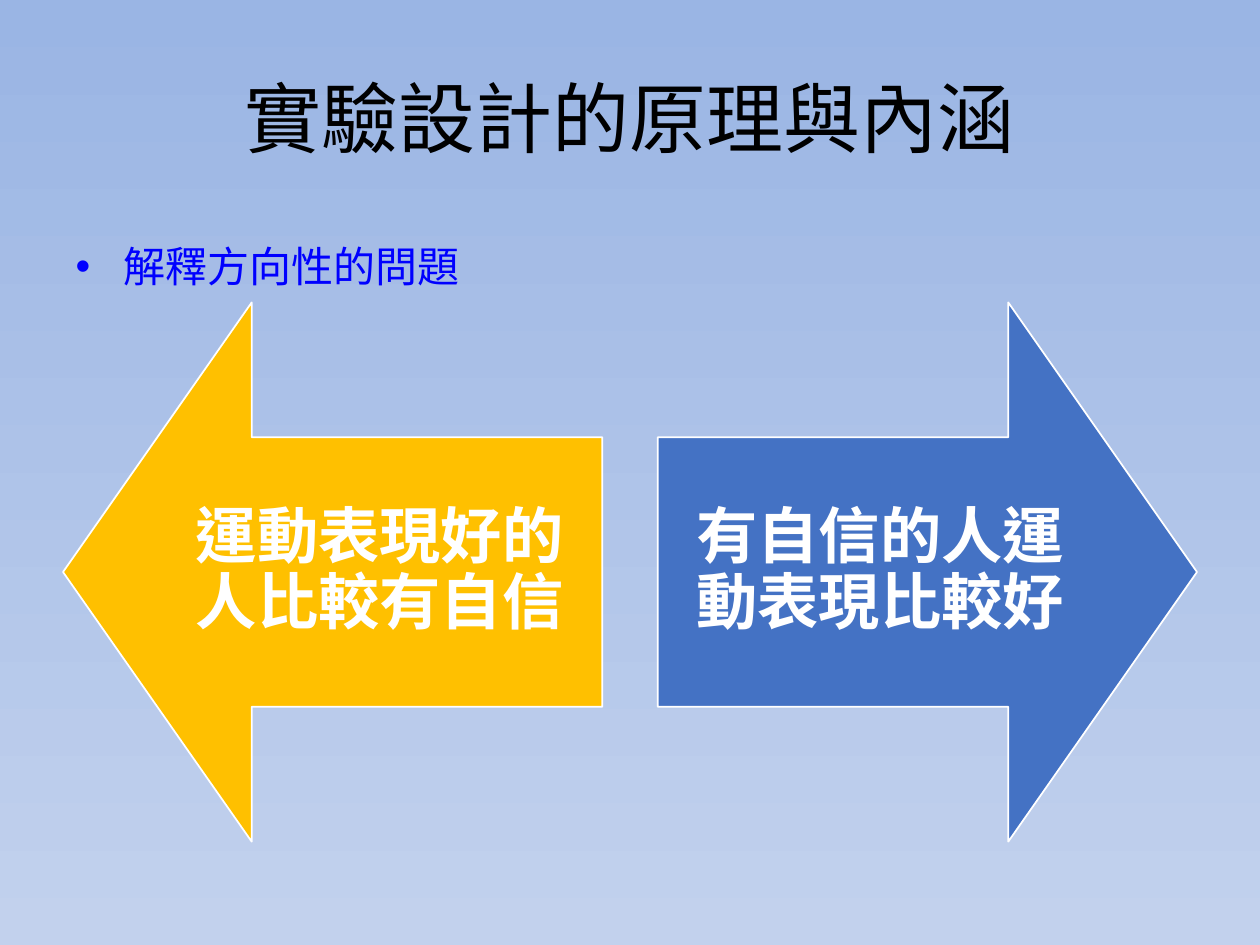
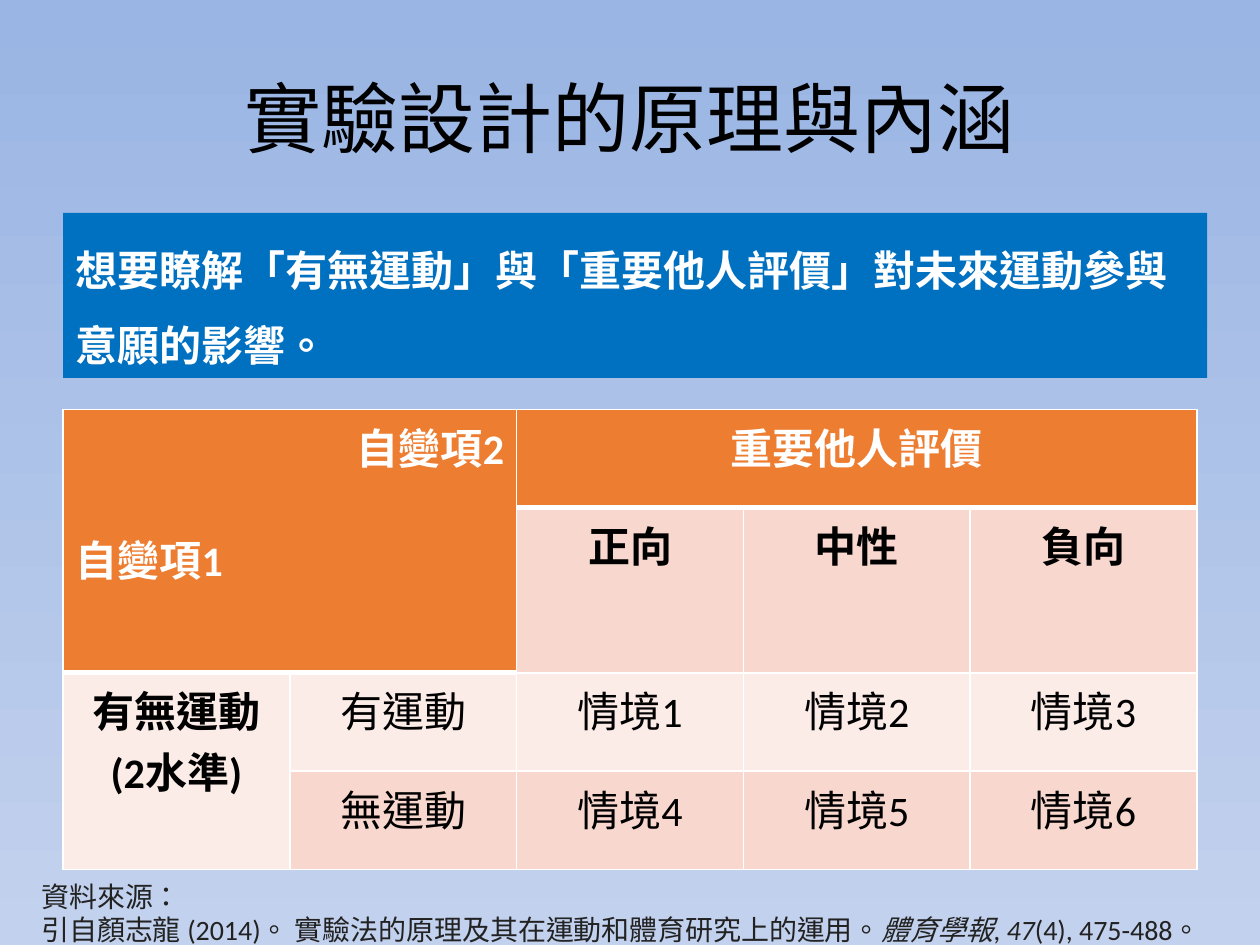
from dataclasses import dataclass

from lxml import etree
from pptx import Presentation
from pptx.dml.color import RGBColor
from pptx.enum.lang import MSO_LANGUAGE_ID
from pptx.enum.shapes import MSO_SHAPE
from pptx.enum.text import MSO_ANCHOR, MSO_AUTO_SIZE, PP_ALIGN
from pptx.oxml.ns import qn
from pptx.util import Inches, Pt

LEFT, CENTER, RIGHT = PP_ALIGN.LEFT, PP_ALIGN.CENTER, PP_ALIGN.RIGHT
TOP, MIDDLE = MSO_ANCHOR.TOP, MSO_ANCHOR.MIDDLE
LEFT_ARROW, RIGHT_ARROW = MSO_SHAPE.LEFT_ARROW, MSO_SHAPE.RIGHT_ARROW
RECTANGLE = MSO_SHAPE.RECTANGLE
NO_AUTOFIT = MSO_AUTO_SIZE.NONE
TAIWAN = MSO_LANGUAGE_ID.TRADITIONAL_CHINESE


@dataclass(frozen=True)
class Theme:
    """Colours, typefaces and type sizes shared by the slides."""
    latin: str = "Calibri"
    asian: str = "Noto Sans CJK SC"
    sky: tuple = ("9AB5E4", "C2D1ED")
    ink: str = "000000"
    paper: str = "FFFFFF"
    bullet: str = "0000FF"
    gold: str = "FFC000"
    blue: str = "4472C4"
    question: str = "0070C0"
    source: str = "222222"
    header: str = "ED7D31"
    dark_band: str = "F8D7CE"
    light_band: str = "FCECE8"
    title_size: int = 44
    arrow_size: int = 35
    body_size: int = 24
    source_size: int = 16


THEME = Theme()
WIDTH, HEIGHT, MARGIN = 10, 7.5, 0.5
CONTENT = WIDTH - 2 * MARGIN

TITLE = "實驗設計的原理與內涵"
TOPIC = "解釋方向性的問題"
ARROWS = [
    (LEFT_ARROW, THEME.gold, "運動表現好的人比較有自信"),
    (RIGHT_ARROW, THEME.blue, "有自信的人運動表現比較好"),
]
ARROW_SIDE, ARROW_TOP = 4.28, 2.4

QUESTION = "想要瞭解「有無運動」與「重要他人評價」對未來運動參與意願的影響。"
SOURCE_LABEL = "資料來源："
CITATION = [
    ("引自顏志龍 (2014)。 實驗法的原理及其在運動和體育研究上的運用。", False),
    ("體育學報", True), (",\u00a0", False), ("47", True), ("(4), 475-488。", False),
]
FACTORS = [
    [[("自變項2", RIGHT), ("自變項1", LEFT)], None, "重要他人評價", None, None],
    [None, None, "正向", "中性", "負向"],
    [["有無運動", "(2水準)"], "有運動", "情境1", "情境2", "情境3"],
    [None, "無運動", "情境4", "情境5", "情境6"],
]
MERGES = [((0, 0), (1, 1)), ((0, 2), (0, 4)), ((2, 0), (3, 0))]
ROW_HEIGHTS = [0.78, 1.31, 0.78, 0.78]
STUB_COLUMNS = 2
LINE_GAP = 29


def rgb(colour):
    """Turn a hex string into a colour."""
    return RGBColor.from_string(colour)


def inches(*lengths):
    """Convert lengths in inches."""
    return [Inches(length) for length in lengths]


def style(item, size, colour, bold=False, italic=False):
    """Set the font of a paragraph or a run."""
    font = item.font
    font.name, font.size, font.bold, font.italic = THEME.latin, Pt(size), bold, italic
    font.color.rgb = rgb(colour)
    font.language_id = TAIWAN
    for latin in list(item._element.iter(qn("a:latin"))):
        asian = etree.Element(qn("a:ea"), typeface=THEME.asian)
        latin.addnext(asian)


def write(para, text, size, colour, bold=False, align=LEFT):
    """Fill a paragraph with text of one style."""
    para.text = text
    para.alignment = align
    style(para, size, colour, bold)


def add_block(slide, kind, frame, fill, line=None):
    """Add a flat filled shape that wraps its text."""
    block = slide.shapes.add_shape(kind, *inches(*frame))
    block.shadow.inherit = False
    block.fill.solid()
    block.fill.fore_color.rgb = rgb(fill)
    if line:
        block.line.color.rgb = rgb(line)
        block.line.width = Pt(1)
    else:
        block.line.fill.background()
    block.text_frame.word_wrap = True
    return block


def add_slide(deck, layout):
    """Add a slide with the shared title."""
    slide = deck.slides.add_slide(deck.slide_layouts[layout])
    title = slide.shapes.title
    title.left, title.top, title.width, title.height = inches(MARGIN, 0.3, CONTENT, 1.25)
    title.text_frame.vertical_anchor = MIDDLE
    write(title.text_frame.paragraphs[0], TITLE, THEME.title_size, THEME.ink, align=CENTER)
    return slide


def add_topic(slide):
    """Place the bulleted topic in the body placeholder."""
    body = slide.placeholders[1]
    body.left, body.top, body.width, body.height = inches(MARGIN, 1.73, CONTENT, 0.75)
    body.text_frame.auto_size = NO_AUTOFIT
    para = body.text_frame.paragraphs[0]
    properties = para._p.get_or_add_pPr()
    indent = Inches(0.38)
    properties.set("marL", str(indent))
    properties.set("indent", str(-indent))
    etree.SubElement(properties, qn("a:buChar"), char="•")
    para.line_spacing = Pt(38)
    para.space_before = Pt(0)
    write(para, TOPIC, THEME.body_size, THEME.bullet)


def add_arrows(slide):
    """Draw the two opposed arrows against the side margins."""
    for index, (kind, fill, text) in enumerate(ARROWS):
        left = MARGIN + index * (CONTENT - ARROW_SIDE)
        arrow = add_block(slide, kind, (left, ARROW_TOP, ARROW_SIDE, ARROW_SIDE), fill, THEME.paper)
        arrow.adjustments[0], arrow.adjustments[1] = 0.5, 0.35
        frame = arrow.text_frame
        frame.vertical_anchor = MIDDLE
        frame.margin_left = frame.margin_right = Inches(0.27)
        frame.margin_top = frame.margin_bottom = Inches(0.27)
        para = frame.paragraphs[0]
        para.line_spacing = 0.9
        write(para, text, THEME.arrow_size, THEME.paper, True, CENTER)


def add_source(slide):
    """Write the citation at the foot of the slide."""
    box = slide.shapes.add_textbox(*inches(0.23, 6.93, 10.02, 0.64))
    frame = box.text_frame
    frame.word_wrap = True
    write(frame.paragraphs[0], SOURCE_LABEL, THEME.source_size, THEME.source)
    para = frame.add_paragraph()
    for text, italic in CITATION:
        span = para.add_run()
        span.text = text
        style_run(span, italic)


def style_run(span, italic):
    """Set the font of one part of the citation."""
    span.font.italic = italic
    span.font.name, span.font.size = THEME.latin, Pt(THEME.source_size)
    span.font.color.rgb = rgb(THEME.source)
    span.font.language_id = TAIWAN
    latin = span.font._element.find(qn("a:latin"))
    latin.addnext(etree.Element(qn("a:ea"), typeface=THEME.asian))


def rule_width(row, column):
    """Give the width of the line below a row: heavy under the header."""
    return 3 if row == (1 if column < STUB_COLUMNS else 0) else 1


def add_borders(cell, row, column):
    """Draw white lines around a cell."""
    last_row = row + (cell.span_height if cell.is_merge_origin else 1) - 1
    widths = {"L": 1, "R": 1, "T": rule_width(row - 1, column), "B": rule_width(last_row, column)}
    properties = cell._tc.get_or_add_tcPr()
    for side, width in widths.items():
        line = etree.SubElement(properties, qn(f"a:ln{side}"), w=str(Pt(width)))
        fill = etree.SubElement(line, qn("a:solidFill"))
        etree.SubElement(fill, qn("a:srgbClr"), val=THEME.paper)


def cell_fill(row, column):
    """Choose the header colour or the band of a cell."""
    if row == 0 or (row == 1 and column < STUB_COLUMNS):
        return THEME.header
    return THEME.light_band if row == 2 or column == 0 else THEME.dark_band


def fill_cell(cell, content, fill, bold):
    """Write the lines of one cell."""
    lines = content if isinstance(content, list) else [content]
    colour = THEME.paper if fill == THEME.header else THEME.ink
    frame = cell.text_frame
    for index, line in enumerate(lines):
        text, align = line if isinstance(line, tuple) else (line, CENTER)
        para = frame.add_paragraph() if index else frame.paragraphs[0]
        if index and fill == THEME.header:
            para.space_before = Pt(LINE_GAP)
        write(para, text, THEME.body_size, colour, bold, align)


def add_factors(slide):
    """Build the table of the two-factor design."""
    rows, columns = len(FACTORS), len(FACTORS[0])
    frame = inches(MARGIN, 3.25, CONTENT, sum(ROW_HEIGHTS))
    table = slide.shapes.add_table(rows, columns, *frame).table
    table.horz_banding = False
    for row, height in zip(table.rows, ROW_HEIGHTS):
        row.height = Inches(height)
    for first, last in MERGES:
        table.cell(*first).merge(table.cell(*last))
    for row, contents in enumerate(FACTORS):
        for column, content in enumerate(contents):
            cell, fill = table.cell(row, column), cell_fill(row, column)
            add_borders(cell, row, column)
            cell.fill.solid()
            cell.fill.fore_color.rgb = rgb(fill)
            if content:
                fill_cell(cell, content, fill, row < 2 or column == 0)


def add_question(slide):
    """Place the research question in its band."""
    band = add_block(slide, RECTANGLE, (MARGIN, 1.69, 9.08, 1.31), THEME.question)
    band.text_frame.vertical_anchor = TOP
    para = band.text_frame.paragraphs[0]
    para.line_spacing = 1.5
    write(para, QUESTION, THEME.body_size, THEME.paper, True)


def main():
    """Build and save the two slides."""
    deck = Presentation()
    deck.slide_width, deck.slide_height = inches(WIDTH, HEIGHT)
    sky = deck.slide_master.background.fill
    sky.gradient()
    sky.gradient_angle = 270
    for stop, colour in zip(sky.gradient_stops, THEME.sky):
        stop.color.rgb = rgb(colour)

    direction = add_slide(deck, 1)
    add_arrows(direction)
    add_topic(direction)

    design = add_slide(deck, 5)
    add_source(design)
    add_factors(design)
    add_question(design)
    deck.save("out.pptx")


if __name__ == "__main__":
    main()
